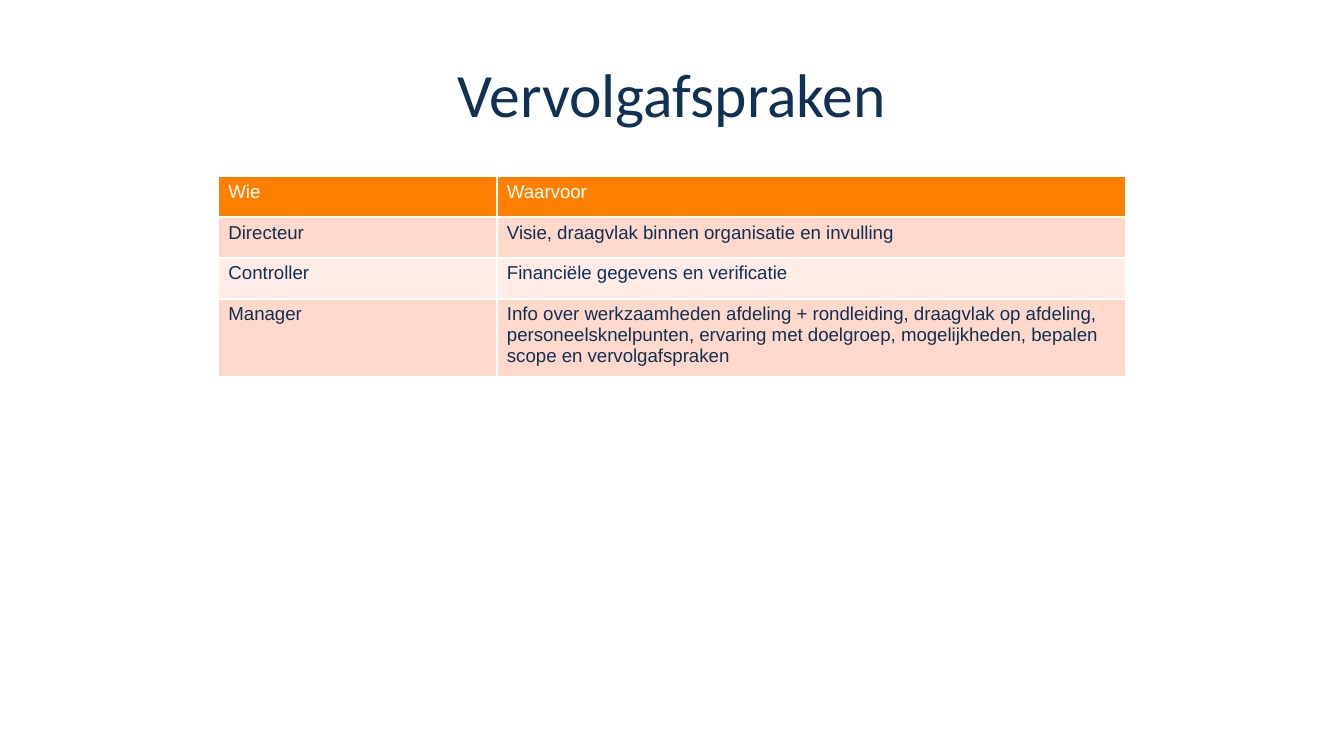
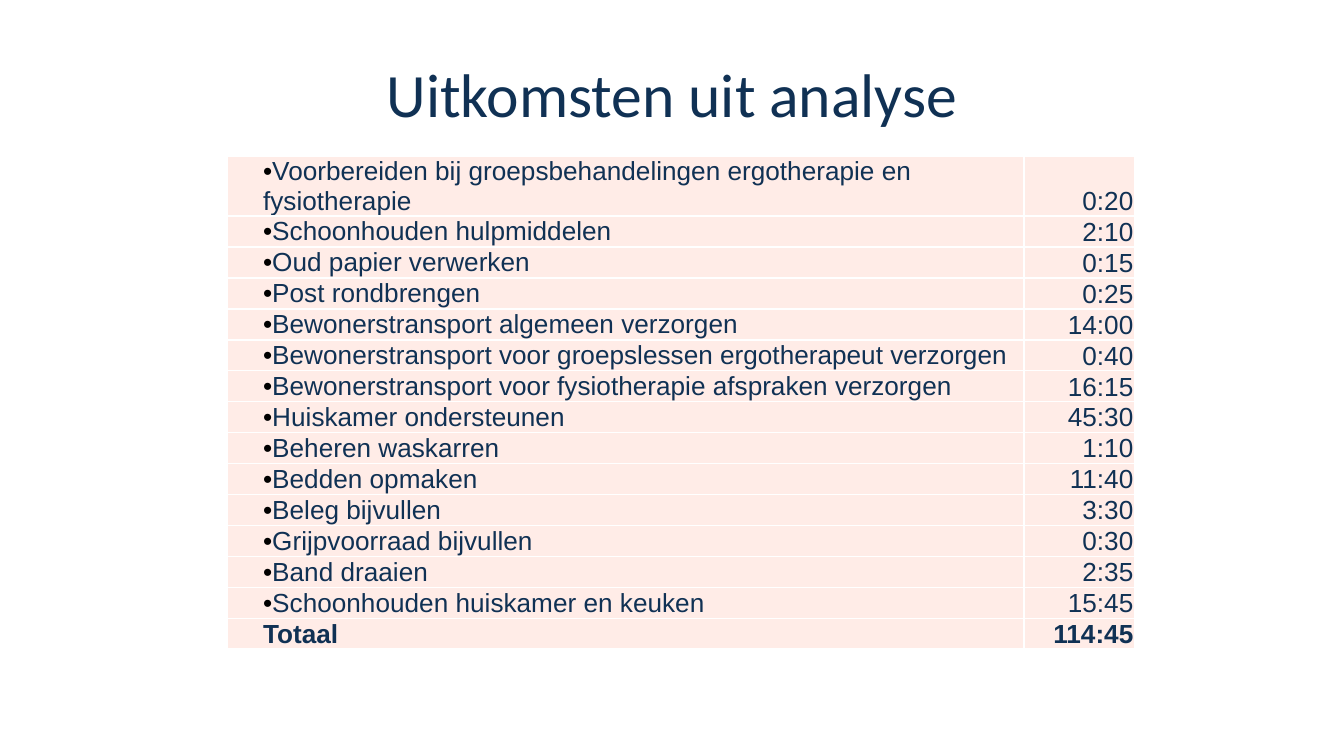
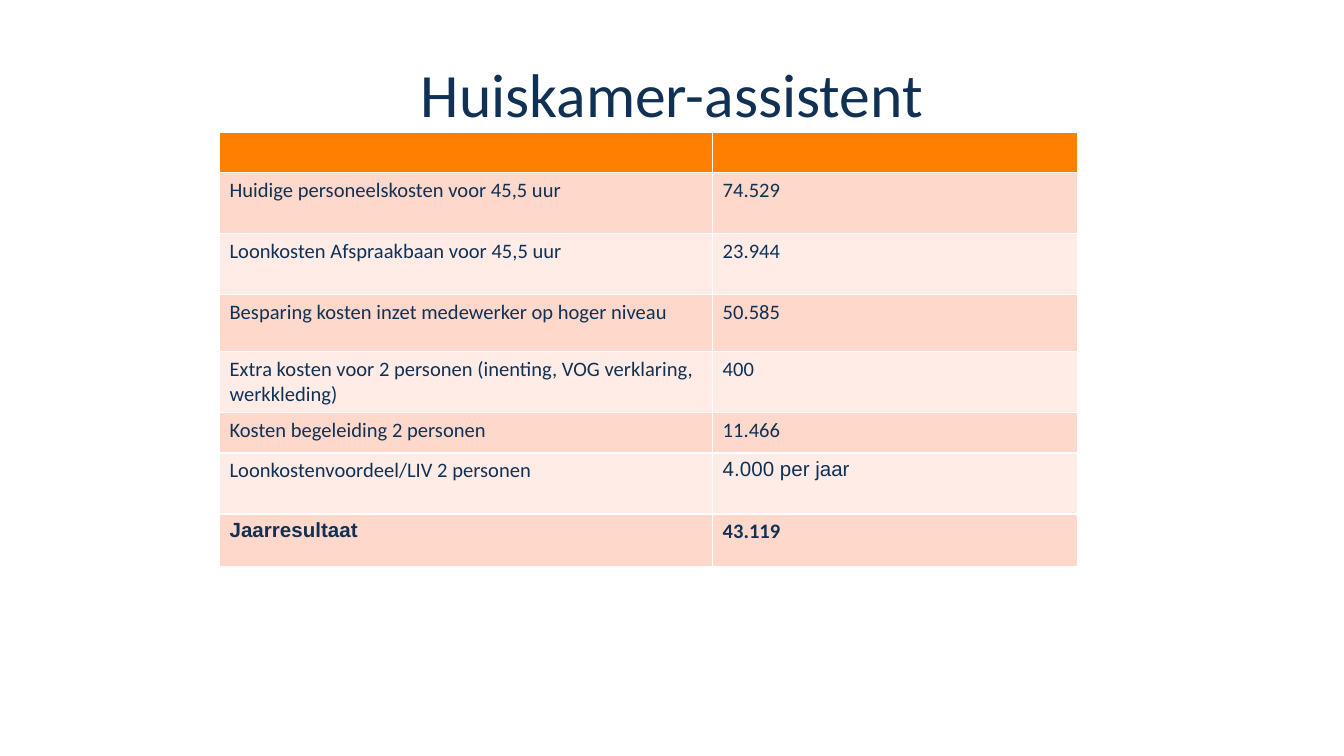
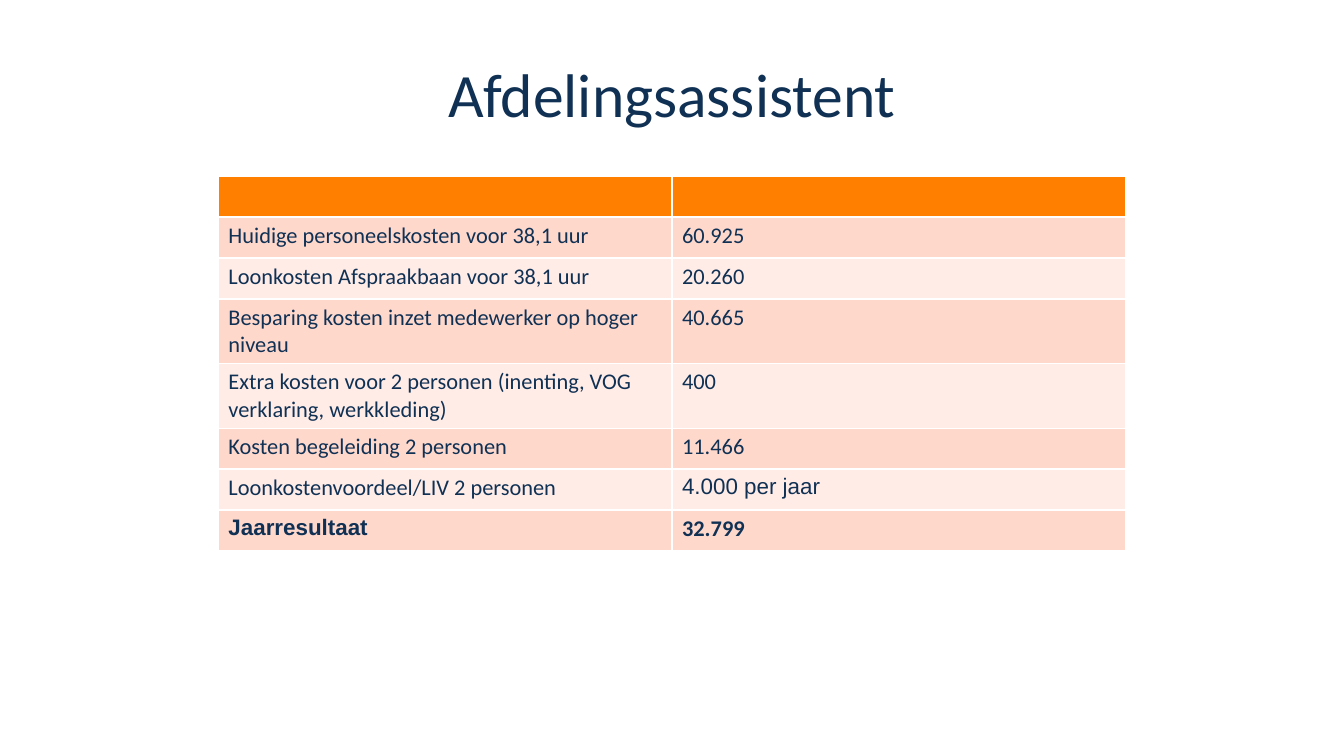
from lxml.etree import SubElement
from pptx import Presentation
from pptx.dml.color import RGBColor
from pptx.enum.text import MSO_ANCHOR, PP_ALIGN
from pptx.oxml.ns import qn
from pptx.util import Pt

# Shared colours, fonts and cell margins (left, top, right, bottom)
NAVY, WHITE, BLACK = "103154", "FFFFFF", "000000"
ORANGE, PINK, PALE_PINK = "FF7F01", "FFD8CC", "FFECE7"
BODY_FONT, TITLE_FONT = "Arial", "Calibri"
ROOMY_MARGINS = (5.4, 2.7, 5.4, 2.7)
TASK_MARGINS, TIME_MARGINS = (19.3, 0.5, 0.5, 0), (0.5, 0.5, 0.5, 0)


def color(hex_string):
    return RGBColor.from_string(hex_string)


def format_cell(cell, fill, margins, size):
    """Give a cell its margins, white borders, fill and empty-text size."""
    cell.margin_left, cell.margin_top, cell.margin_right, cell.margin_bottom = map(Pt, margins)
    properties = cell._tc.get_or_add_tcPr()
    for side in "LRTB":
        line = SubElement(properties, qn(f"a:ln{side}"), w=str(Pt(1)))
        line_fill = SubElement(line, qn("a:solidFill"))
        SubElement(line_fill, qn("a:srgbClr"), val=WHITE)
    cell.fill.solid()
    cell.fill.fore_color.rgb = color(fill)
    end_properties = cell.text_frame.paragraphs[0]._p.get_or_add_endParaRPr()
    end_properties.set("sz", str(size * 100))


# Contents of the four slides
appointments = [
    ("Wie", "Waarvoor"),
    ("Directeur", "Visie, draagvlak binnen organisatie en invulling"),
    ("Controller", "Financiële gegevens en verificatie"),
    ("Manager", "Info over werkzaamheden afdeling + rondleiding, draagvlak op afdeling, "
                "personeelsknelpunten, ervaring met doelgroep, mogelijkheden, bepalen "
                "scope en vervolgafspraken"),
]
task_hours = [
    ("Voorbereiden bij groepsbehandelingen ergotherapie en fysiotherapie", "0:20"),
    ("Schoonhouden hulpmiddelen", "2:10"),
    ("Oud papier verwerken", "0:15"),
    ("Post rondbrengen", "0:25"),
    ("Bewonerstransport algemeen verzorgen", "14:00"),
    ("Bewonerstransport voor groepslessen ergotherapeut verzorgen", "0:40"),
    ("Bewonerstransport voor fysiotherapie afspraken verzorgen", "16:15"),
    ("Huiskamer ondersteunen", "45:30"),
    ("Beheren waskarren", "1:10"),
    ("Bedden opmaken", "11:40"),
    ("Beleg bijvullen", "3:30"),
    ("Grijpvoorraad bijvullen", "0:30"),
    ("Band draaien", "2:35"),
    ("Schoonhouden huiskamer en keuken", "15:45"),
    ("Totaal", "114:45"),
]
cost_tables = []
for hours, current_costs, wage_costs, saving, result in (
    ("45,5", "74.529", "23.944", "50.585", "43.119"),
    ("38,1", "60.925", "20.260", "40.665", "32.799"),
):
    cost_tables.append([
        ("", ""),
        (f"Huidige personeelskosten voor {hours} uur", current_costs),
        (f"Loonkosten Afspraakbaan voor {hours} uur", wage_costs),
        ("Besparing kosten inzet medewerker op hoger niveau", saving),
        ("Extra kosten voor 2 personen (inenting, VOG verklaring, werkkleding)", "400"),
        ("Kosten begeleiding 2 personen", "11.466"),
        ("Loonkostenvoordeel/LIV 2 personen", "4.000 per jaar"),
        ("Jaarresultaat", result),
    ])
living_room_costs, department_costs = cost_tables

# Title, rows, table position, column widths, row heights, text size, font
slides = [
    ("Vervolgafspraken", appointments, (117, 94.5), (149.2, 336.8),
     [21.9] * 3 + [41.5], 10, BODY_FONT),
    ("Uitkomsten uit analyse", task_hours, (121.7, 83.7), (427, 59),
     [16.6] * 15, 14, BODY_FONT),
    ("Huiskamer-assistent", living_room_costs, (117.6, 70.8), (264.2, 195.8),
     [21.7, 32.7, 32.7, 30.5, 32.6, 21.8, 32.7, 28.5], 11, TITLE_FONT),
    ("Afdelingsassistent", department_costs, (117, 94.5), (243, 243),
     [21.9] * 3 + [34.6] * 2 + [21.9] * 3, 12, TITLE_FONT),
]

presentation = Presentation()
presentation.slide_width, presentation.slide_height = Pt(720), Pt(405)

for title_text, rows, position, widths, heights, size, font_name in slides:
    slide = presentation.slides.add_slide(presentation.slide_layouts[5])
    is_task_list = rows is task_hours

    # Title
    title = slide.shapes.title
    title.left, title.top, title.width, title.height = Pt(36), Pt(16.2), Pt(648), Pt(67.5)
    title.text_frame.vertical_anchor = MSO_ANCHOR.MIDDLE
    paragraph = title.text_frame.paragraphs[0]
    paragraph.alignment = PP_ALIGN.CENTER
    run = paragraph.add_run()
    run.text = title_text
    run.font.size, run.font.name = Pt(33), TITLE_FONT
    run.font.color.rgb = color(NAVY)

    # Table frame
    table = slide.shapes.add_table(
        len(rows), 2, Pt(position[0]), Pt(position[1]), Pt(sum(widths)), Pt(sum(heights))
    ).table
    table.first_row = table.horz_banding = False
    for column, width in zip(table.columns, widths):
        column.width = Pt(width)
    for row, height in zip(table.rows, heights):
        row.height = Pt(height)

    # Table cells
    for row_index, row_texts in enumerate(rows):
        is_header = row_index == 0 and not is_task_list
        is_total = row_texts[0] in ("Totaal", "Jaarresultaat")
        if is_header:
            fill = ORANGE
        else:
            fill = PINK if row_index % 2 and not is_task_list else PALE_PINK

        for column_index, text in enumerate(row_texts):
            cell = table.cell(row_index, column_index)
            margins = (TASK_MARGINS, TIME_MARGINS)[column_index] if is_task_list else ROOMY_MARGINS
            format_cell(cell, fill, margins, size)
            paragraph = cell.text_frame.paragraphs[0]

            if is_task_list and column_index == 0:
                cell.vertical_anchor = MSO_ANCHOR.MIDDLE
                if not is_total:
                    properties = paragraph._p.get_or_add_pPr()
                    bullet_color = SubElement(properties, qn("a:buClr"))
                    SubElement(bullet_color, qn("a:srgbClr"), val=BLACK)
                    SubElement(properties, qn("a:buFont"), typeface=BODY_FONT)
                    SubElement(properties, qn("a:buChar"), char="•")
            elif is_task_list:
                cell.vertical_anchor = MSO_ANCHOR.BOTTOM
                paragraph.alignment = PP_ALIGN.RIGHT

            if text:
                run = paragraph.add_run()
                run.text = text
                run.font.size = Pt(size)
                run.font.name = BODY_FONT if text in ("4.000 per jaar", "Jaarresultaat") else font_name
                run.font.bold = is_total
                run.font.color.rgb = color(WHITE if is_header else NAVY)

presentation.save("out.pptx")
